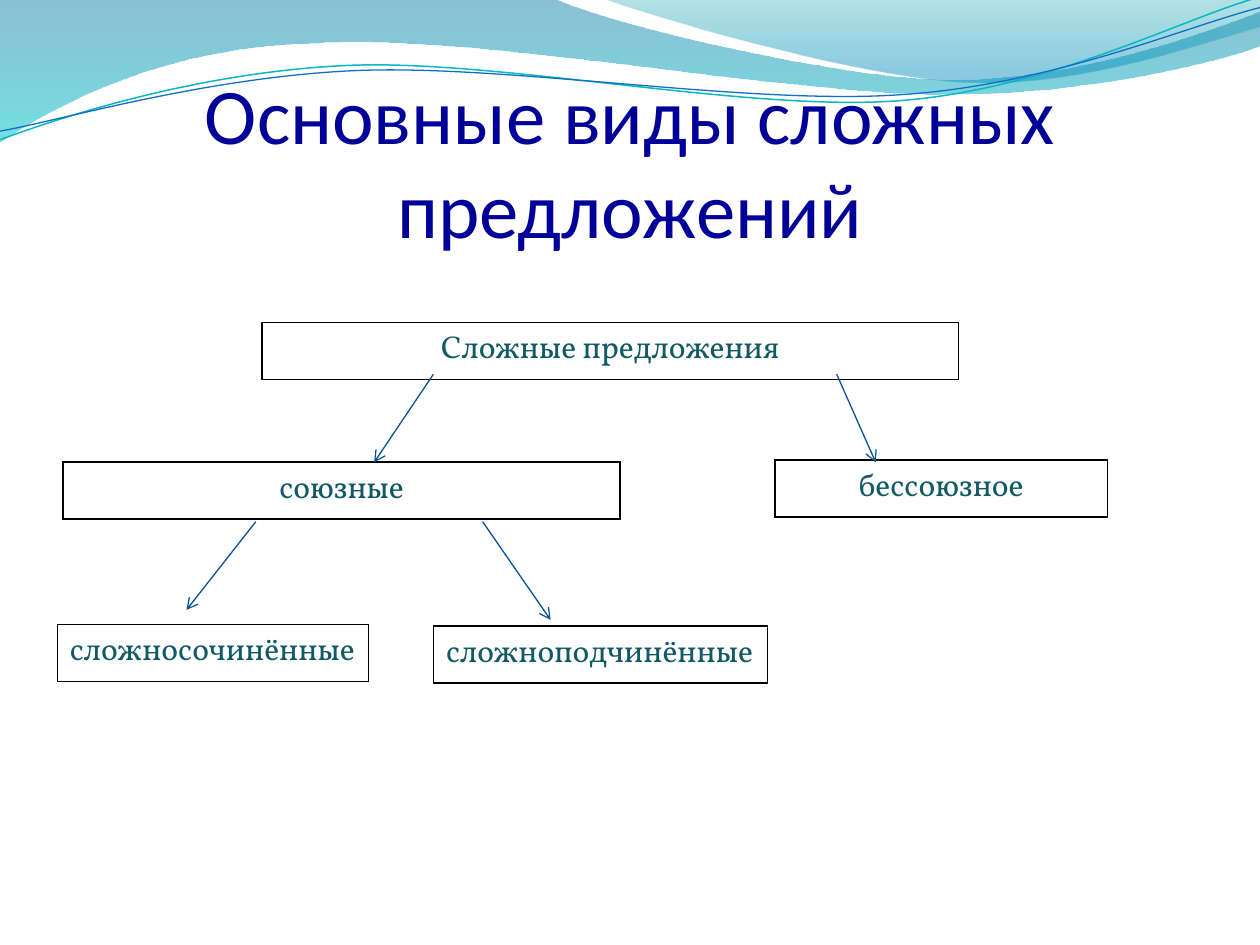
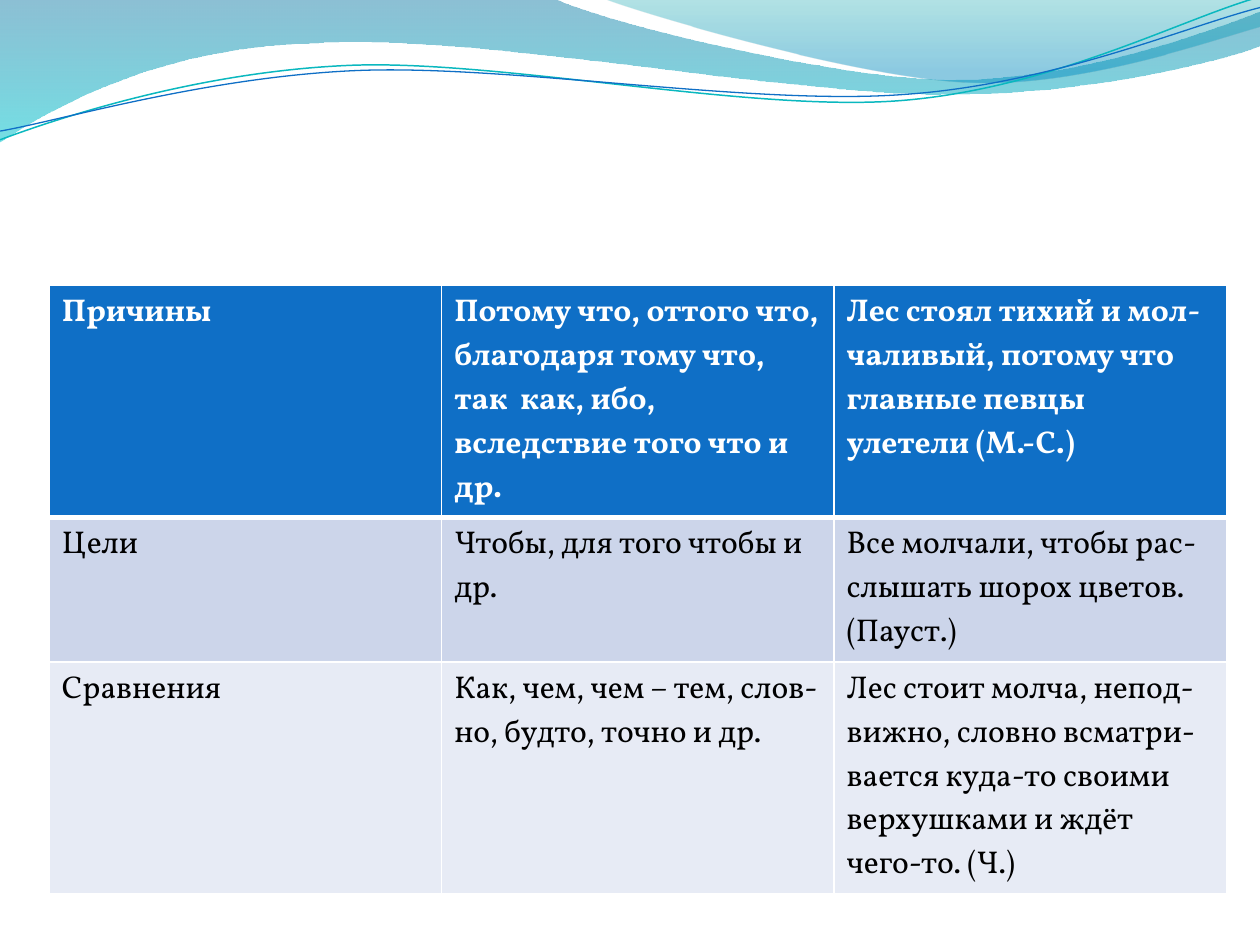
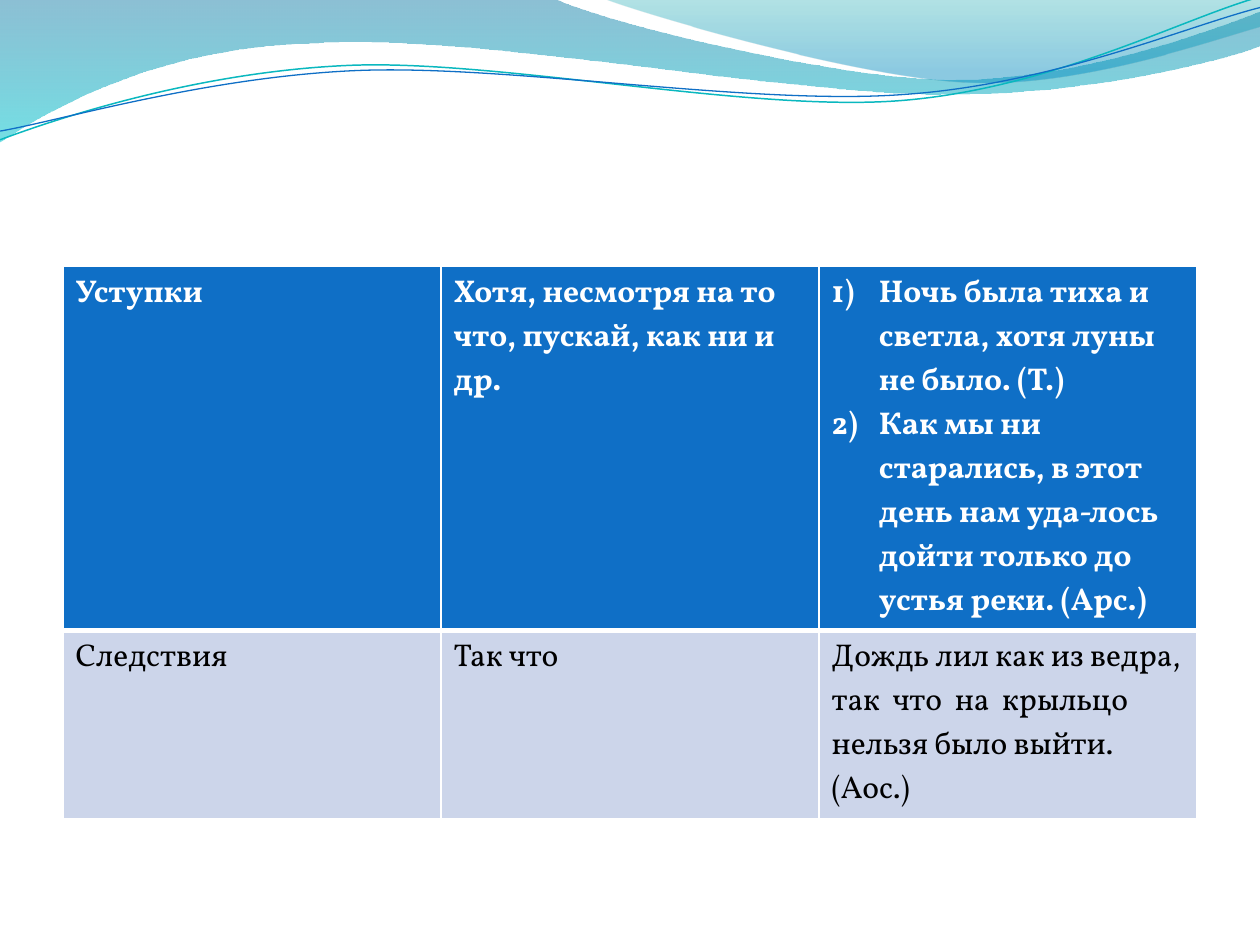
"""Build three slides on the kinds of complex sentences in Russian."""
from lxml import etree
from pptx import Presentation
from pptx import util as u
from pptx.dml.color import RGBColor
from pptx.enum import shapes, text
from pptx.oxml.ns import qn

COLOURS = {
    "title": "000099", "term": "115964", "frame": "000000", "arrow": "095295",
    "header": "0F6FC6", "odd": "CCD5EA", "even": "E7EBF5",
    "white": "FFFFFF", "body": "000000",
    "deep": "0074A1", "aqua": "00C6CF", "teal": "00A1A9", "sky": "008BBF",
    "upper_line": "0AB8BF", "lower_line": "0F6FC6",
}
TITLE_FONT, BODY_FONT = "Calibri", "Vollkorn"
TERM_HEIGHT = 32.6

WIDE_WAVE = [
    (0, 0), (316.8, -0.7),
    (342.7, 12.2, 478.1, 45.4, 545.8, 45.4), (614.2, 45.4, 689.8, 18.7, 720, 6.5),
    (720.7, 25.9),
    (707.8, 31.7, 626.4, 54.7, 537.1, 54), (447.8, 54, 275, 20.2, 185, 24.5),
    (92.9, 25.9, 33.1, 59.8, -0.7, 81.4),
]
CORNER_WAVE = [
    (344.9, -0.7),
    (366.5, 7.9, 491, 44.6, 553.7, 46.8), (616.3, 49.7, 691.9, 23, 720, 15.1),
    (720, 0),
]
UPPER_LINE = [
    (0, 79.9),
    (34.6, 67, 113.8, 41, 199.4, 37.4), (284.4, 33.8, 427, 64.1, 513.4, 57.6),
    (599.8, 51.1, 675.4, 10.8, 718.6, -1.4),
]
LOWER_LINE = [
    (0, 74.9),
    (33.8, 69.1, 118.1, 43.9, 203.8, 40.3), (290.2, 36.7, 429.8, 60.5, 516.2, 54),
    (601.9, 48.2, 677.5, 15.1, 720, 4.3),
]

CENTER, LEFT = text.PP_ALIGN.CENTER, text.PP_ALIGN.LEFT
TERMS = [
    ("Сложные предложения", 149.6, 184.3, 398.2, CENTER),
    ("союзные", 36, 264.1, 318.4, CENTER),
    ("бессоюзное", 442.8, 262.8, 190.1, CENTER),
    ("сложносочинённые", 32.7, 356.7, 177.8, LEFT),
    ("сложноподчинённые", 247.7, 357.8, 191, LEFT),
]
ARROWS = [
    (247.7, 213.8, 213.8, 264.2), (478.1, 213.8, 500.4, 264.2),
    (146.2, 298.1, 106.6, 348.5), (275.8, 298.1, 314.6, 354.2),
]
REASONS = [
    ["Причины",
     "Потому что, оттого что, благодаря тому что, так  как, ибо, вследствие того что и др.",
     "Лес стоял тихий и мол-чаливый, потому что главные певцы улетели (М.-С.)"],
    ["Цели",
     "Чтобы, для того чтобы и др.",
     "Все молчали, чтобы рас-слышать шорох цветов.\n(Пауст.)"],
    ["Сравнения",
     "Как, чем, чем – тем, слов-но, будто, точно и др.",
     "Лес стоит молча, непод-вижно, словно всматри-вается куда-то своими верхушками "
     "и ждёт чего-то. (Ч.)"],
]
CONCESSIONS = [
    ["Уступки",
     "Хотя, несмотря на то что, пускай, как ни и др.",
     "Ночь была тиха и светла, хотя луны не было. (Т.)\n"
     "Как мы ни старались, в этот день нам уда-лось дойти только до устья реки. (Арс.)"],
    ["Следствия",
     "Так что",
     "Дождь лил как из ведра, так  что  на  крыльцо нельзя было выйти. (Аос.)"],
]


def rgb(name):
    """Return the named colour."""
    return RGBColor.from_string(COLOURS[name])


def style_text(frame, font, size, colour, bold=False, align=LEFT):
    """Format every paragraph and run of a text frame."""
    for paragraph in frame.paragraphs:
        paragraph.alignment = align
        for run in paragraph.runs:
            run.font.name, run.font.size, run.font.bold = font, u.Pt(size), bold
            run.font.color.rgb = rgb(colour)


def bend(shape, outline):
    """Join each three segments that stand for a cubic curve into one."""
    segments = iter(list(shape.element.iter(qn("a:lnTo"))))
    for step in outline[1:]:
        segment = next(segments)
        if len(step) == 6:
            segment.tag = qn("a:cubicBezTo")
            for _ in range(2):
                following = next(segments)
                segment.append(following[0])
                following.getparent().remove(following)


def add_outline(slide, outline, close):
    """Draw a freeform of lines and cubic curves without shadow."""
    points = [(u.Pt(step[i]), u.Pt(step[i + 1]))
              for step in outline for i in range(0, len(step), 2)]
    builder = slide.shapes.build_freeform(*points[0])
    builder.add_line_segments(points[1:], close=False)
    shape = builder.convert_to_shape()
    bend(shape, outline)
    if close:
        etree.SubElement(next(shape.element.iter(qn("a:path"))), qn("a:close"))
    shape.shadow.inherit = False
    return shape


def add_wave(slide, outline, stops):
    """Draw a wave with a see-through gradient from top to bottom."""
    wave = add_outline(slide, outline, True)
    wave.line.fill.background()
    wave.fill.gradient()
    wave.fill.gradient_angle = 270
    for stop, (position, colour, _) in zip(wave.fill.gradient_stops, stops):
        stop.position, stop.color.rgb = position, rgb(colour)
    for node, (_, _, opacity) in zip(wave.element.iter(qn("a:gs")), stops):
        etree.SubElement(node[0], qn("a:alpha"), val=str(opacity * 1000))
    return wave


def add_wave_line(slide, outline, colour, width):
    """Draw an open curved line."""
    curve = add_outline(slide, outline, False)
    curve.fill.background()
    curve.line.color.rgb, curve.line.width = rgb(colour), u.Pt(width)
    return curve


def decorate_layout(slide):
    """Put the wave band on the layout that all slides share."""
    layout = slide.slide_layout
    for placeholder in list(layout.placeholders):
        layout.shapes.element.remove(placeholder.element)
    band = [
        add_wave(slide, WIDE_WAVE, [(0, "deep", 45), (1, "aqua", 55)]),
        add_wave(slide, CORNER_WAVE, [(0, "teal", 30), (0.8, "sky", 45)]),
        add_wave_line(slide, UPPER_LINE, "upper_line", 0.85),
        add_wave_line(slide, LOWER_LINE, "lower_line", 0.75),
    ]
    for part in band:
        layout.shapes.element.append(part.element)


def add_title(slide, title):
    """Add the slide title, anchored at the bottom."""
    heading = slide.shapes.add_textbox(u.Pt(36), u.Pt(55.4), u.Pt(648), u.Pt(90))
    frame = heading.text_frame
    frame.word_wrap, frame.vertical_anchor = True, text.MSO_ANCHOR.BOTTOM
    frame.margin_left = frame.margin_right = frame.margin_bottom = 0
    frame.margin_top = u.Pt(3.6)
    frame.text = title
    style_text(frame, TITLE_FONT, 45, "title", align=CENTER)


def set_borders(cell, colour, top=1, bottom=1):
    """Give a cell its four border lines."""
    properties = cell._tc.get_or_add_tcPr()
    edges = [("L", 1), ("R", 1), ("T", top), ("B", bottom)]
    for index, (edge, width) in enumerate(edges):
        line = etree.Element(qn("a:ln" + edge), w=str(u.Pt(width)))
        fill = etree.SubElement(line, qn("a:solidFill"))
        etree.SubElement(fill, qn("a:srgbClr"), val=COLOURS[colour])
        properties.insert(index, line)


def add_grid(slide, left, top, width, heights, columns):
    """Add a table with equal columns and the given row heights."""
    grid = slide.shapes.add_table(len(heights), columns, u.Pt(left), u.Pt(top),
                                  u.Pt(width), u.Pt(sum(heights))).table
    for row, height in zip(grid.rows, heights):
        row.height = u.Pt(height)
    return grid


def add_term(slide, term, left, top, width, align):
    """Add a framed term as a table of one cell."""
    cell = add_grid(slide, left, top, width, [TERM_HEIGHT], 1).cell(0, 0)
    cell.text_frame.text = term
    style_text(cell.text_frame, BODY_FONT, 18, "term", align=align)
    cell.fill.background()
    set_borders(cell, "frame")


def add_arrow(slide, x1, y1, x2, y2):
    """Add a thin arrow from the first point to the second."""
    arrow = slide.shapes.add_connector(shapes.MSO_CONNECTOR.STRAIGHT,
                                       u.Pt(x1), u.Pt(y1), u.Pt(x2), u.Pt(y2))
    arrow.line.color.rgb, arrow.line.width = rgb("arrow"), u.Pt(0.75)
    properties = arrow.element.spPr
    etree.SubElement(properties.find(qn("a:ln")), qn("a:tailEnd"), type="arrow")
    etree.SubElement(properties, qn("a:effectLst"))


def add_clauses(slide, clauses, left, top, width, heights):
    """Add a table of clause kinds, conjunctions and examples."""
    grid = add_grid(slide, left, top, width, heights, len(clauses[0]))
    for r, row in enumerate(clauses):
        header = r == 0
        fill = "header" if header else "odd" if r % 2 else "even"
        for c, wording in enumerate(row):
            cell = grid.cell(r, c)
            cell.text_frame.text = wording
            style_text(cell.text_frame, BODY_FONT, 18,
                       "white" if header else "body", bold=header)
            cell.fill.solid()
            cell.fill.fore_color.rgb = rgb(fill)
            set_borders(cell, "white", top=3 if r == 1 else 1, bottom=3 if header else 1)
    return grid


def number_paragraphs(cell):
    """Number the paragraphs of a cell as 1), 2) and so on."""
    for paragraph in cell.text_frame.paragraphs:
        properties = paragraph._p.get_or_add_pPr()
        properties.set("marL", str(u.Pt(27)))
        properties.set("indent", str(u.Pt(-27)))
        etree.SubElement(properties, qn("a:buFont"), typeface="+mj-lt")
        etree.SubElement(properties, qn("a:buAutoNum"), type="arabicParenR")


def main():
    """Build and save the presentation."""
    deck = Presentation()
    deck.slide_width, deck.slide_height = u.Pt(720), u.Pt(540)
    kinds, reasons, concessions = (
        deck.slides.add_slide(deck.slide_layouts[6]) for _ in range(3))
    decorate_layout(kinds)

    add_title(kinds, "Основные виды сложных предложений")
    for term in TERMS:
        add_term(kinds, *term)
    for arrow in ARROWS:
        add_arrow(kinds, *arrow)

    add_clauses(reasons, REASONS, 28.2, 163.1, 672.6, [106.6, 82.1, 131])
    grid = add_clauses(concessions, CONCESSIONS, 36, 152.3, 648, [29.5, 29.5])
    number_paragraphs(grid.cell(0, 2))
    deck.save("out.pptx")


if __name__ == "__main__":
    main()
